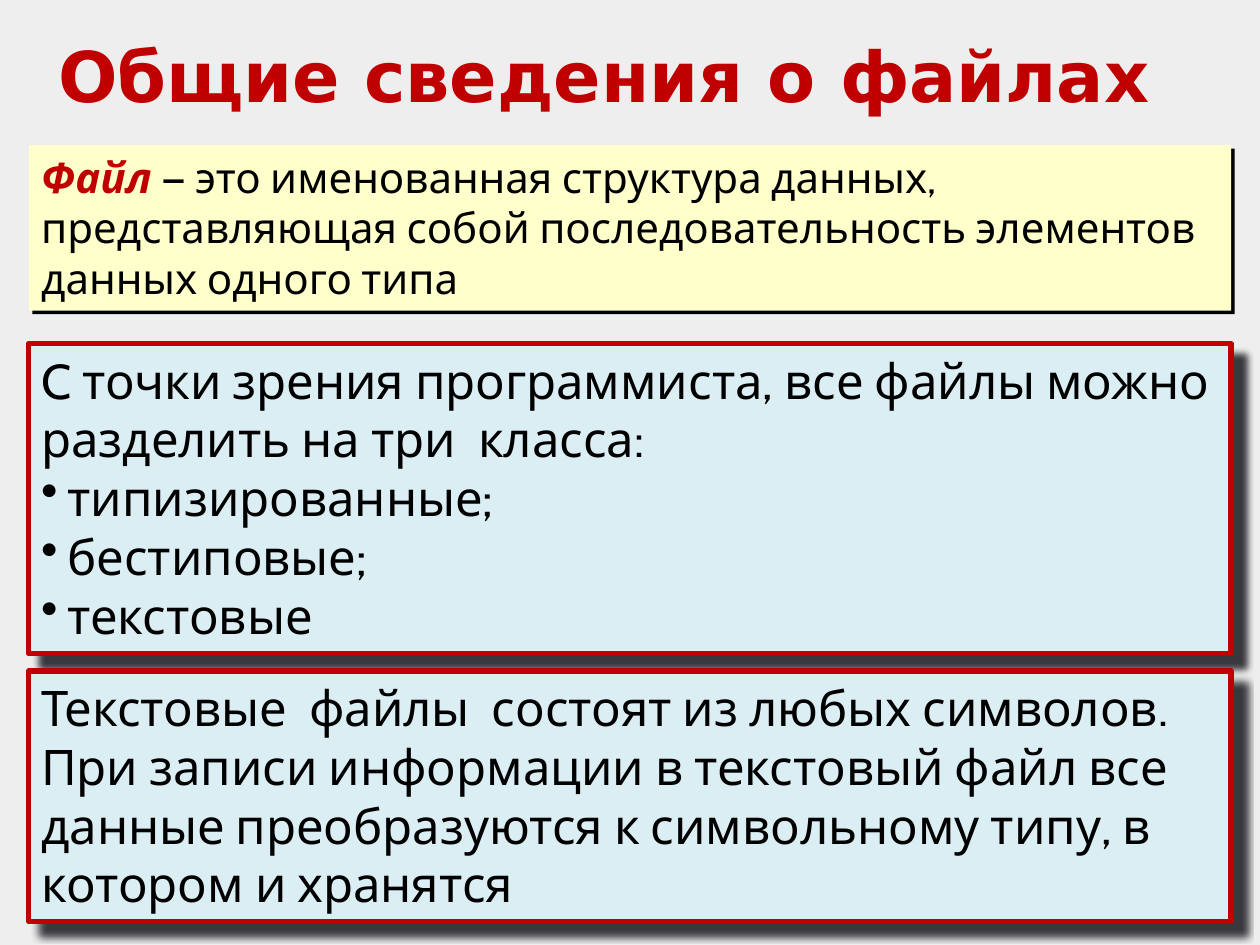
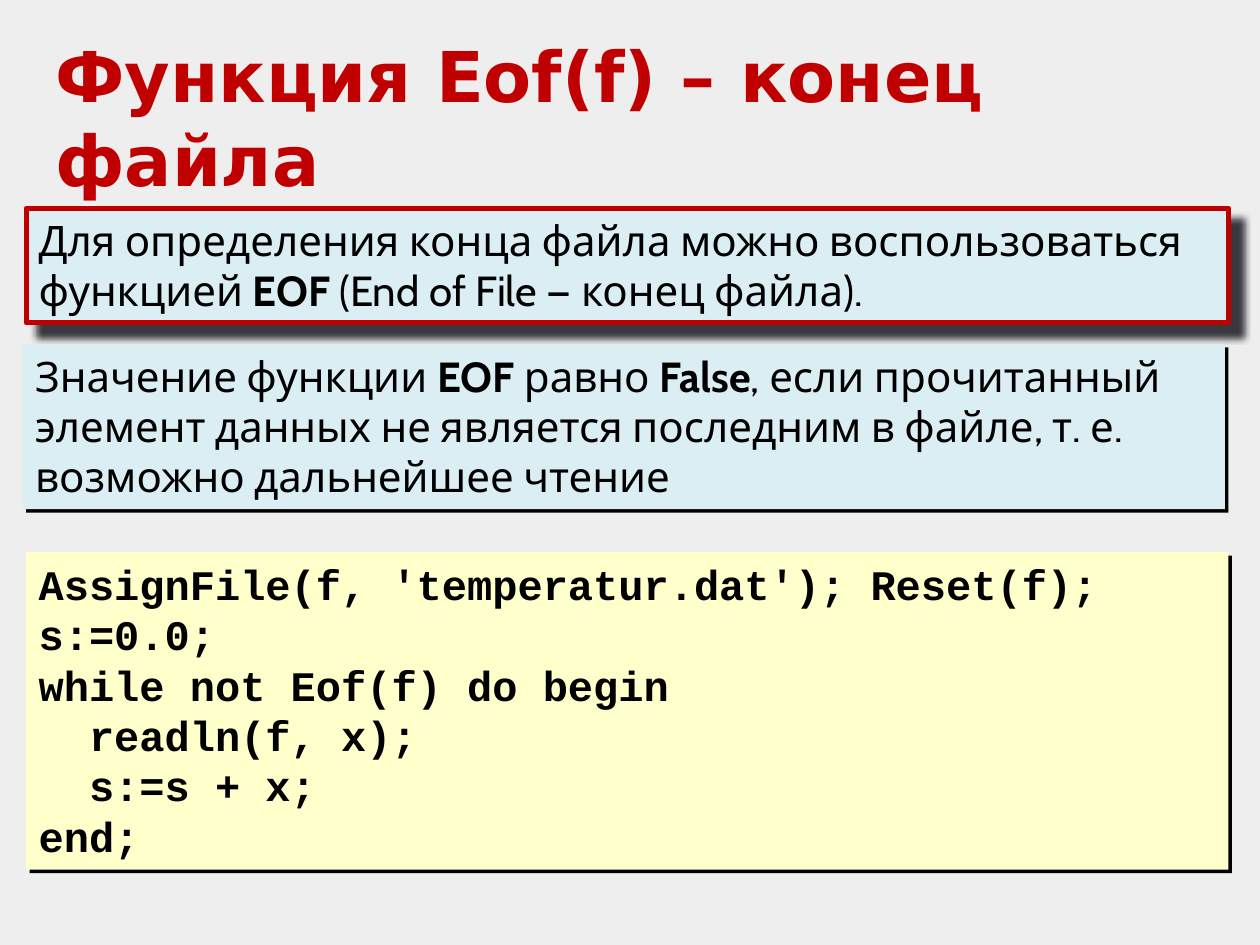
from lxml.etree import SubElement
from pptx import Presentation
from pptx.dml.color import RGBColor
from pptx.enum.shapes import MSO_SHAPE
from pptx.enum.text import MSO_ANCHOR, MSO_AUTO_SIZE, PP_ALIGN
from pptx.oxml.ns import qn
from pptx.util import Pt

COLORS = {
    "background": "EEEEEE",
    "accent": "C00000",
    "text": "000000",
    "blue": "DBEEF4",
    "yellow": "FFFFCC",
    "soft_shadow": "03020A",
    "hard_shadow": "000000",
}
TITLE_FONT, BODY_FONT, CODE_FONT = "DejaVu Sans", "Cabin", "Courier New"
PANEL_WIDTH = 687
BULLET_INDENT = 15

# Shadow: colour, opacity in percent, blur and distance in points
PANEL_STYLES = {
    "framed": {"fill": "blue", "framed": True, "shadow": ("soft_shadow", 76, 4, 10)},
    "plain": {"fill": "blue", "framed": False, "shadow": ("hard_shadow", 100, 0, 2.8)},
    "note": {"fill": "yellow", "framed": False, "shadow": ("hard_shadow", 100, 0, 2.8)},
}

# A paragraph is a list of (text, emphasis) runs, or a plain string
SLIDES = [
    {
        "title": "Общие сведения о файлах",
        "title_box": (26, 15, 668, 56),
        "panels": [
            {"style": "framed", "at": (16.5, 196.5), "height": 177, "size": 28,
             "paragraphs": ["C точки зрения программиста, все файлы можно "
                            "разделить на три  класса:"],
             "bullets": ["типизированные;", "бестиповые;", "текстовые"]},
            {"style": "note", "at": (16.5, 83), "height": 94.5, "size": 24,
             "paragraphs": [[
                 ("Файл ", "term"),
                 ("— это именованная структура данных, представляющая собой "
                  "последовательность элементов данных одного типа", None)]]},
            {"style": "framed", "at": (16.5, 383.5), "height": 143, "size": 28,
             "paragraphs": ["Текстовые  файлы  состоят из любых символов. При записи "
                            "информации в текстовый файл все данные преобразуются к "
                            "символьному типу, в котором и хранятся"]},
        ],
    },
    {
        "title": "Функция Eof(f) – конец файла",
        "title_box": (24.5, 15, 677.5, 104.5),
        "panels": [
            {"style": "framed", "at": (15, 119), "height": 65.5, "size": 24,
             "paragraphs": [[
                 ("Для определения конца файла можно воспользоваться функцией ", None),
                 ("EOF", "bold"),
                 (" (End of File — конец файла).", None)]]},
            {"style": "plain", "at": (13, 196.5), "height": 94.5, "size": 24,
             "paragraphs": [[
                 ("Значение функции ", None),
                 ("EOF", "bold"),
                 (" равно ", None),
                 ("False", "bold"),
                 (", если прочитанный элемент данных не является последним в файле, "
                  "т. е. возможно дальнейшее чтение", None)]]},
            {"style": "note", "at": (15, 315.5), "height": 181.5, "size": 24, "code": True,
             "paragraphs": ["AssignFile(f, 'temperatur.dat'); Reset(f);",
                            "s:=0.0;",
                            "while not Eof(f) do begin",
                            "  readln(f, x);",
                            "  s:=s + x;",
                            "end;"]},
        ],
    },
]


def color(name):
    return RGBColor.from_string(COLORS[name])


def set_font(font, name, size, color_name, bold=False):
    font.name, font.size, font.bold = name, Pt(size), bold
    font.color.rgb = color(color_name)


def add_shadow(shape, color_name, opacity, blur, distance):
    """Cast a shadow to the lower right at 45 degrees."""
    shape.shadow.inherit = False
    effects = shape._element.spPr.find(qn("a:effectLst"))
    shadow = SubElement(effects, qn("a:outerShdw"), blurRad=str(Pt(blur)),
                        dist=str(Pt(distance)), dir="2700000", algn="tl",
                        rotWithShape="0")
    shade = SubElement(shadow, qn("a:srgbClr"), val=COLORS[color_name])
    SubElement(shade, qn("a:alpha"), val=str(opacity * 1000))


def add_bullet(paragraph):
    properties = paragraph._p.get_or_add_pPr()
    properties.set("marL", str(Pt(BULLET_INDENT)))
    properties.set("indent", str(-Pt(BULLET_INDENT)))
    SubElement(properties, qn("a:buChar"), char="•")


def write_runs(paragraph, runs):
    for text, emphasis in runs:
        run = paragraph.add_run()
        run.text = text
        if emphasis:
            run.font.bold = True
        if emphasis == "term":
            run.font.italic = True
            run.font.color.rgb = color("accent")


def write_title(slide, text, box):
    title = slide.shapes.title
    title.left, title.top, title.width, title.height = map(Pt, box)
    frame = title.text_frame
    frame.text = text
    frame.word_wrap = True
    frame.auto_size = MSO_AUTO_SIZE.NONE
    frame.vertical_anchor = MSO_ANCHOR.TOP
    frame.paragraphs[0].alignment = PP_ALIGN.LEFT
    set_font(frame.paragraphs[0].font, TITLE_FONT, 40, "accent", bold=True)


def add_panel(slide, panel):
    style = PANEL_STYLES[panel["style"]]
    left, top = panel["at"]
    shape = slide.shapes.add_shape(MSO_SHAPE.RECTANGLE, Pt(left), Pt(top),
                                   Pt(PANEL_WIDTH), Pt(panel["height"]))
    shape.fill.solid()
    shape.fill.fore_color.rgb = color(style["fill"])
    if style["framed"]:
        shape.line.color.rgb = color("accent")
        shape.line.width = Pt(3)
    else:
        shape.line.fill.background()
    add_shadow(shape, *style["shadow"])

    frame = shape.text_frame
    frame.word_wrap = True
    frame.vertical_anchor = MSO_ANCHOR.TOP
    is_code = panel.get("code", False)
    plain = panel["paragraphs"]
    for index, content in enumerate(plain + panel.get("bullets", [])):
        paragraph = frame.add_paragraph() if index else frame.paragraphs[0]
        paragraph.alignment = PP_ALIGN.LEFT
        if index >= len(plain):
            add_bullet(paragraph)
        set_font(paragraph.font, CODE_FONT if is_code else BODY_FONT,
                 panel["size"], "text", bold=is_code)
        write_runs(paragraph, [(content, None)] if isinstance(content, str) else content)


def main():
    deck = Presentation()
    deck.slide_width, deck.slide_height = Pt(720), Pt(540)
    background = deck.slide_master.background.fill
    background.solid()
    background.fore_color.rgb = color("background")
    title_only = deck.slide_layouts.get_by_name("Title Only")
    for content in SLIDES:
        slide = deck.slides.add_slide(title_only)
        write_title(slide, content["title"], content["title_box"])
        for panel in content["panels"]:
            add_panel(slide, panel)
    deck.save("out.pptx")


if __name__ == "__main__":
    main()
